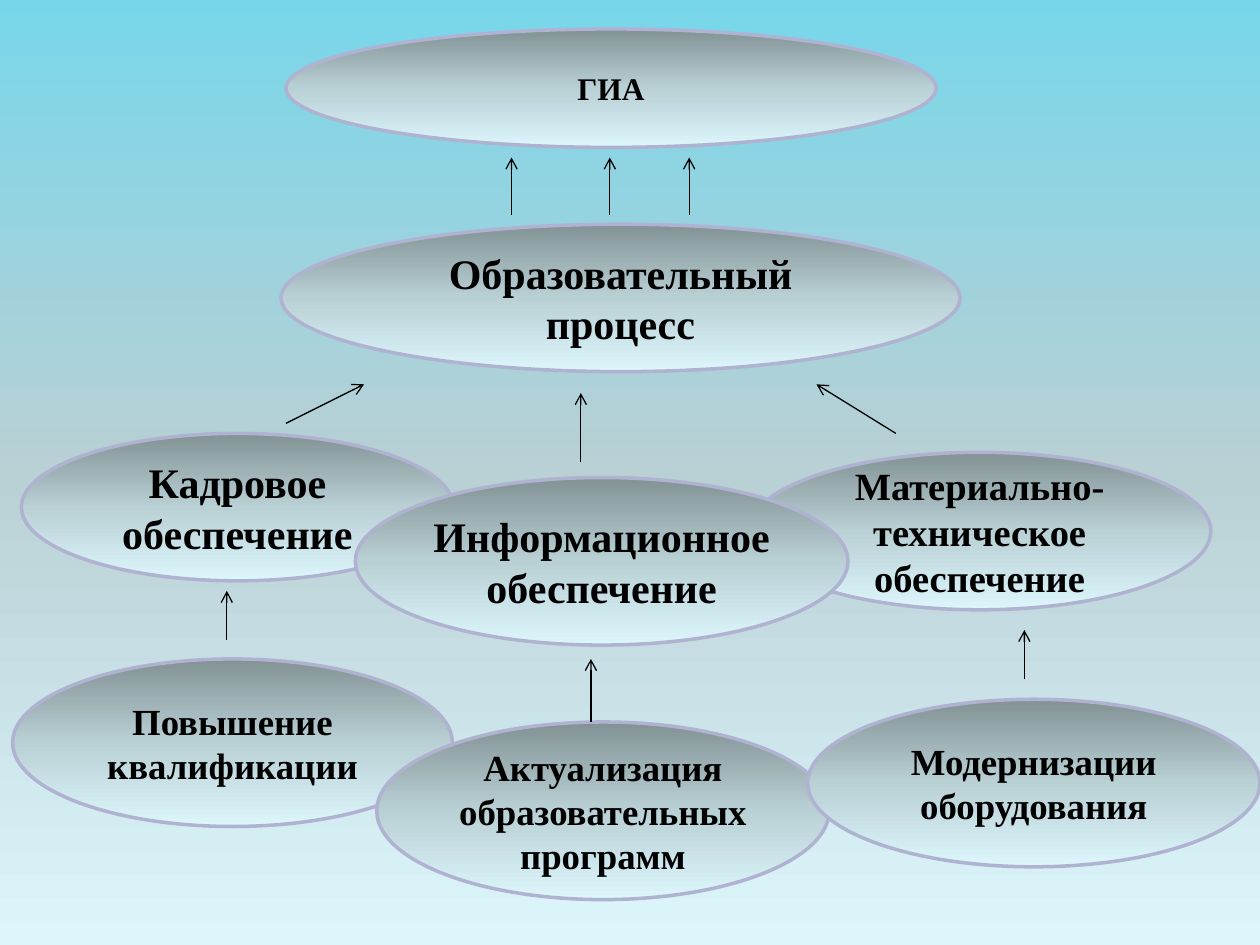
from copy import deepcopy

from lxml import etree
from pptx import Presentation
from pptx import util as u
from pptx.dml.color import RGBColor
from pptx.enum import shapes, text
from pptx.oxml import ns

SKY = RGBColor(0x78, 0xD6, 0xEA)
STEEL = RGBColor(0x82, 0x92, 0x95)
MIST = RGBColor(0xB9, 0xD0, 0xD4)
ICE = RGBColor(0xDC, 0xF6, 0xFC)
LILAC = RGBColor(0xAF, 0xB2, 0xD0)
BLACK = RGBColor(0, 0, 0)


class Diagram:
    font = {"name": "Times New Roman", "bold": True}
    frame = {"word_wrap": True, "vertical_anchor": text.MSO_ANCHOR.MIDDLE}
    no_margins = dict.fromkeys(
        ("margin_left", "margin_top", "margin_right", "margin_bottom"), 0)

    def __init__(self, slide):
        self.slide = slide

    @staticmethod
    def apply(target, values):
        for name, value in values.items():
            setattr(target, name, value)

    @staticmethod
    def gradient(fill, element, top_color):
        """Fill from top to bottom with three evenly spaced stops."""
        fill.gradient()
        fill.gradient_angle = 270
        stop_list = element.find(".//" + ns.qn("a:gsLst"))
        stop_list.append(deepcopy(stop_list[-1]))
        for index, color in enumerate((top_color, MIST, ICE)):
            stop = fill.gradient_stops[index]
            stop.color.rgb = color
            stop.position = index / 2

    def background(self):
        self.gradient(self.slide.background.fill, self.slide.element, SKY)

    def ellipse(self, left, top, width, height, lines, size, margins=True):
        shape = self.slide.shapes.add_shape(
            shapes.MSO_SHAPE.OVAL, *map(u.Inches, (left, top, width, height)))
        shape.shadow.inherit = False
        self.gradient(shape.fill, shape.element, STEEL)
        shape.line.color.rgb = LILAC
        shape.line.width = u.Pt(2)
        frame = shape.text_frame
        self.apply(frame, self.frame if margins else self.frame | self.no_margins)
        frame.text = lines
        for paragraph in frame.paragraphs:
            paragraph.alignment = text.PP_ALIGN.CENTER
            self.apply(paragraph.font, self.font | {"size": u.Pt(size)})
            paragraph.font.color.rgb = BLACK

    def arrow(self, *ends):
        connector = self.slide.shapes.add_connector(
            shapes.MSO_CONNECTOR.STRAIGHT, *map(u.Inches, ends))
        connector.line.color.rgb = BLACK
        connector.line.width = u.Pt(0.75)
        properties = connector.element.spPr
        line = properties.find(ns.qn("a:ln"))
        etree.SubElement(line, ns.qn("a:tailEnd"), type="arrow")
        etree.SubElement(properties, ns.qn("a:effectLst"))


def main():
    presentation = Presentation()
    presentation.slide_width = u.Inches(10)
    presentation.slide_height = u.Inches(7.5)
    slide = presentation.slides.add_slide(presentation.slide_layouts[6])
    diagram = Diagram(slide)
    diagram.background()

    # Goal, resources and process
    diagram.ellipse(2.27, 0.23, 5.16, 0.94, "ГИА", 18)
    diagram.ellipse(0.17, 3.44, 3.43, 1.17, "Кадровое обеспечение", 24)
    diagram.ellipse(5.94, 3.59, 3.67, 1.25,
                    "Материально-техническое обеспечение", 22, margins=False)
    diagram.ellipse(2.82, 3.79, 3.91, 1.33,
                    "Информационное\nобеспечение", 24, margins=False)
    diagram.ellipse(2.23, 1.78, 5.39, 1.17,
                    "Образовательный процесс", 24, margins=False)

    # Measures that support the resources
    diagram.ellipse(0.1, 5.23, 3.49, 1.33, "Повышение квалификации", 21)
    diagram.ellipse(2.99, 5.73, 3.59, 1.41,
                    "Актуализация образовательных программ", 21)
    diagram.ellipse(6.41, 5.55, 3.59, 1.33, "Модернизации оборудования", 21)

    # Process to goal
    for x in (4.06, 4.84, 5.47):
        diagram.arrow(x, 1.71, x, 1.25)
    # Resources to process
    diagram.arrow(2.27, 3.36, 2.89, 3.05)
    diagram.arrow(4.61, 3.67, 4.61, 3.12)
    diagram.arrow(7.11, 3.44, 6.48, 3.05)
    # Measures to resources
    for x, start, end in ((1.8, 5.08, 4.69), (4.69, 5.73, 5.23), (8.13, 5.39, 5)):
        diagram.arrow(x, start, x, end)

    presentation.save("out.pptx")


if __name__ == "__main__":
    main()
